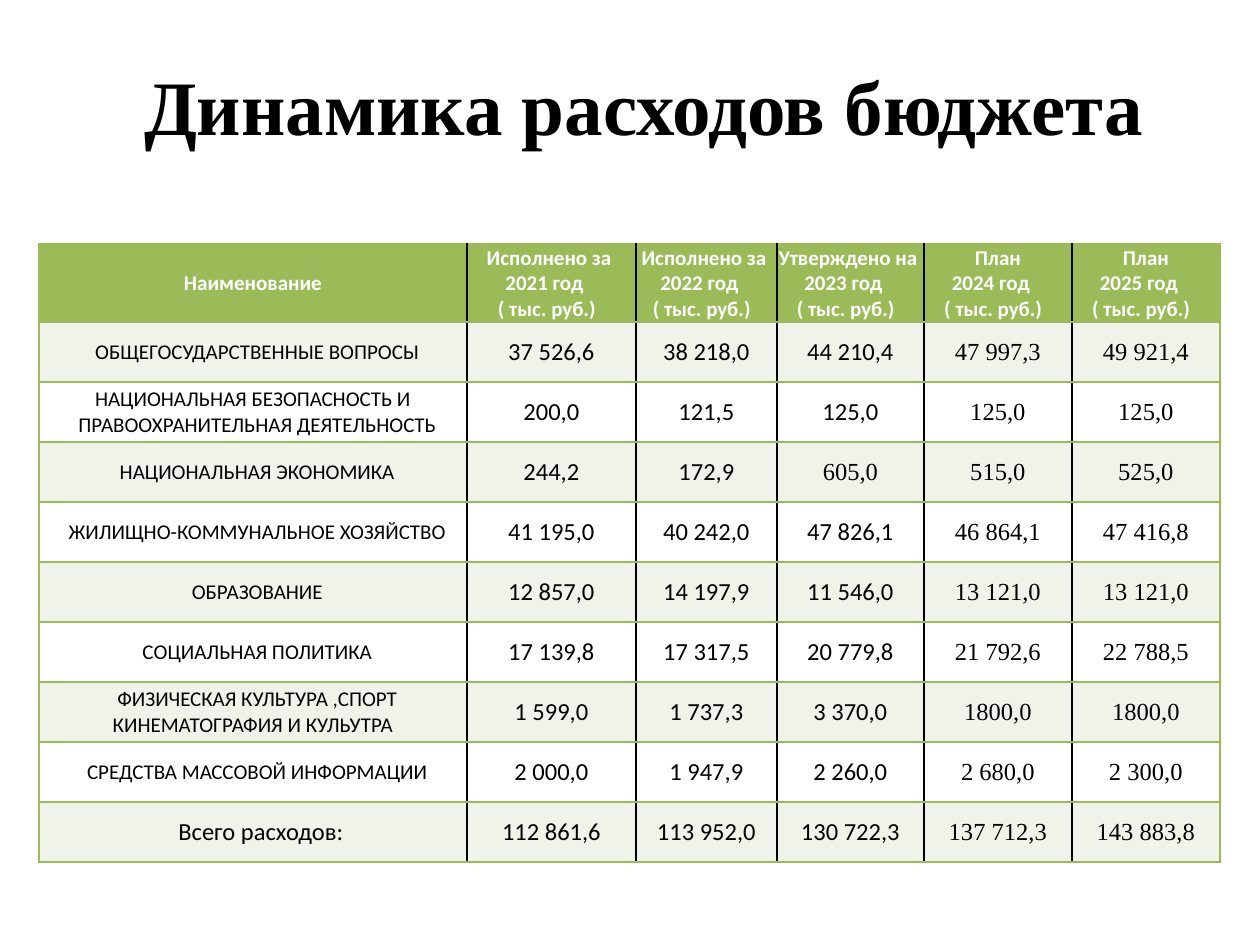
from lxml.etree import SubElement
from pptx import Presentation
from pptx.dml.color import RGBColor
from pptx.enum.text import MSO_ANCHOR, PP_ALIGN
from pptx.oxml.ns import qn
from pptx.util import Emu, Pt

PX_PER_INCH = 126
SANS, SERIF = "Calibri", "Times New Roman"
GREEN, PALE, WHITE, BLACK = "9BBB59", "EFF3EA", "FFFFFF", "000000"

COLUMN_WIDTHS = [428, 169, 141, 147, 148, 148]
HEADER_HEIGHT, ROW_HEIGHT = 78, 60
PERIODS = [
    ("Исполнено за ", 2021),
    ("Исполнено за ", 2022),
    ("Утверждено на ", 2023),
    ("План", 2024),
    ("План", 2025),
]
EXPENSES = [
    (["ОБЩЕГОСУДАРСТВЕННЫЕ ВОПРОСЫ"],
     ["37 526,6", "38 218,0", "44 210,4", "47 997,3", "49 921,4"]),
    (["НАЦИОНАЛЬНАЯ БЕЗОПАСНОСТЬ И", "ПРАВООХРАНИТЕЛЬНАЯ ДЕЯТЕЛЬНОСТЬ"],
     ["200,0", "121,5", "125,0", "125,0", "125,0"]),
    (["НАЦИОНАЛЬНАЯ ЭКОНОМИКА"],
     ["244,2", "172,9", "605,0", "515,0", "525,0"]),
    (["ЖИЛИЩНО-КОММУНАЛЬНОЕ ХОЗЯЙСТВО"],
     ["41 195,0", "40 242,0", "47 826,1", "46 864,1", "47 416,8"]),
    (["ОБРАЗОВАНИЕ"],
     ["12 857,0", "14 197,9", "11 546,0", "13 121,0", "13 121,0"]),
    (["СОЦИАЛЬНАЯ ПОЛИТИКА"],
     ["17 139,8", "17 317,5", "20 779,8", "21 792,6", "22 788,5"]),
    (["ФИЗИЧЕСКАЯ КУЛЬТУРА ,СПОРТ КИНЕМАТОГРАФИЯ И КУЛЬУТРА"],
     ["1 599,0", "1 737,3", "3 370,0", "1800,0", "1800,0"]),
    (["СРЕДСТВА МАССОВОЙ ИНФОРМАЦИИ"],
     ["2 000,0", "1 947,9", "2 260,0", "2 680,0", "2 300,0"]),
    (["Всего расходов:"],
     ["112 861,6", "113 952,0", "130 722,3", "137 712,3", "143 883,8"]),
]


def px(length):
    return Emu(round(length * 914400 / PX_PER_INCH))


def color(hex_code):
    return RGBColor.from_string(hex_code)


def write_lines(frame, lines, size, font=SANS, ink=BLACK, bold=False, indents=()):
    """Write centred paragraphs; indents holds one dict of pPr lengths in points per line."""
    for index, line in enumerate(lines):
        paragraph = frame.paragraphs[0] if index == 0 else frame.add_paragraph()
        paragraph.alignment = PP_ALIGN.CENTER
        if index < len(indents):
            for side, points in indents[index].items():
                paragraph._p.get_or_add_pPr().set(side, str(Pt(points)))
        run = paragraph.add_run()
        run.text = line
        run.font.size = Pt(size)
        run.font.name = font
        run.font.bold = bold
        run.font.color.rgb = color(ink)


def style_cell(cell, fill, left, right):
    """Set insets, borders and fill; horizontal borders are always green."""
    cell.vertical_anchor = MSO_ANCHOR.MIDDLE
    cell.margin_left = cell.margin_right = cell.margin_top = px(1)
    cell.margin_bottom = 0
    properties = cell._tc.get_or_add_tcPr()
    for side, ink in (("L", left), ("R", right), ("T", GREEN), ("B", GREEN)):
        border = SubElement(properties, qn(f"a:ln{side}"), w=str(Pt(1)))
        border_fill = SubElement(border, qn("a:solidFill"))
        SubElement(border_fill, qn("a:srgbClr"), val=ink)
    cell.fill.solid()
    cell.fill.fore_color.rgb = color(fill)


def add_title(slide, left, top, width, height):
    frame = slide.shapes.add_textbox(px(left), px(top), px(width), px(height)).text_frame
    frame.word_wrap = True
    frame.vertical_anchor = MSO_ANCHOR.MIDDLE
    write_lines(frame, ["Динамика расходов бюджета"], 44, SERIF, bold=True)


def add_expenses_table(slide, left, top):
    height = HEADER_HEIGHT + ROW_HEIGHT * len(EXPENSES)
    table = slide.shapes.add_table(
        len(EXPENSES) + 1, len(COLUMN_WIDTHS),
        px(left), px(top), px(sum(COLUMN_WIDTHS)), px(height)).table
    for column, width in zip(table.columns, COLUMN_WIDTHS):
        column.width = px(width)

    # Fills and borders
    last_column = len(COLUMN_WIDTHS) - 1
    for row_index, row in enumerate(table.rows):
        row.height = px(ROW_HEIGHT if row_index else HEADER_HEIGHT)
        fill = GREEN if row_index == 0 else PALE if row_index % 2 else WHITE
        for column_index, cell in enumerate(row.cells):
            style_cell(cell, fill,
                       left=BLACK if column_index else GREEN,
                       right=BLACK if column_index < last_column else GREEN)

    # Header row
    write_lines(table.cell(0, 0).text_frame, ["Наименование"], 12, ink=WHITE, bold=True)
    for column_index, (status, year) in enumerate(PERIODS, 1):
        write_lines(table.cell(0, column_index).text_frame,
                    [status, f"{year} год", " ( тыс. руб.)"], 12, ink=WHITE, bold=True,
                    indents=[{}, {"marR": 8}])

    # Expense rows, with the total last
    for row_index, (name_lines, amounts) in enumerate(EXPENSES, 1):
        is_total = row_index == len(EXPENSES)
        first_line = {"indent": 9 if is_total else 5} if len(name_lines) == 1 else {}
        write_lines(table.cell(row_index, 0).text_frame, name_lines, 14 if is_total else 12,
                    indents=[first_line, {"indent": 5}])
        for column_index, amount in enumerate(amounts, 1):
            is_serif = column_index > 3 or amount == "605,0"
            write_lines(table.cell(row_index, column_index).text_frame, [amount], 14,
                        SERIF if is_serif else SANS)


def main():
    deck = Presentation()
    deck.slide_width, deck.slide_height = px(1260), px(945)
    slide = deck.slides.add_slide(deck.slide_layouts[6])
    add_title(slide, 77, 26, 1134, 158)
    add_expenses_table(slide, 39, 244)
    deck.save("out.pptx")


if __name__ == "__main__":
    main()
